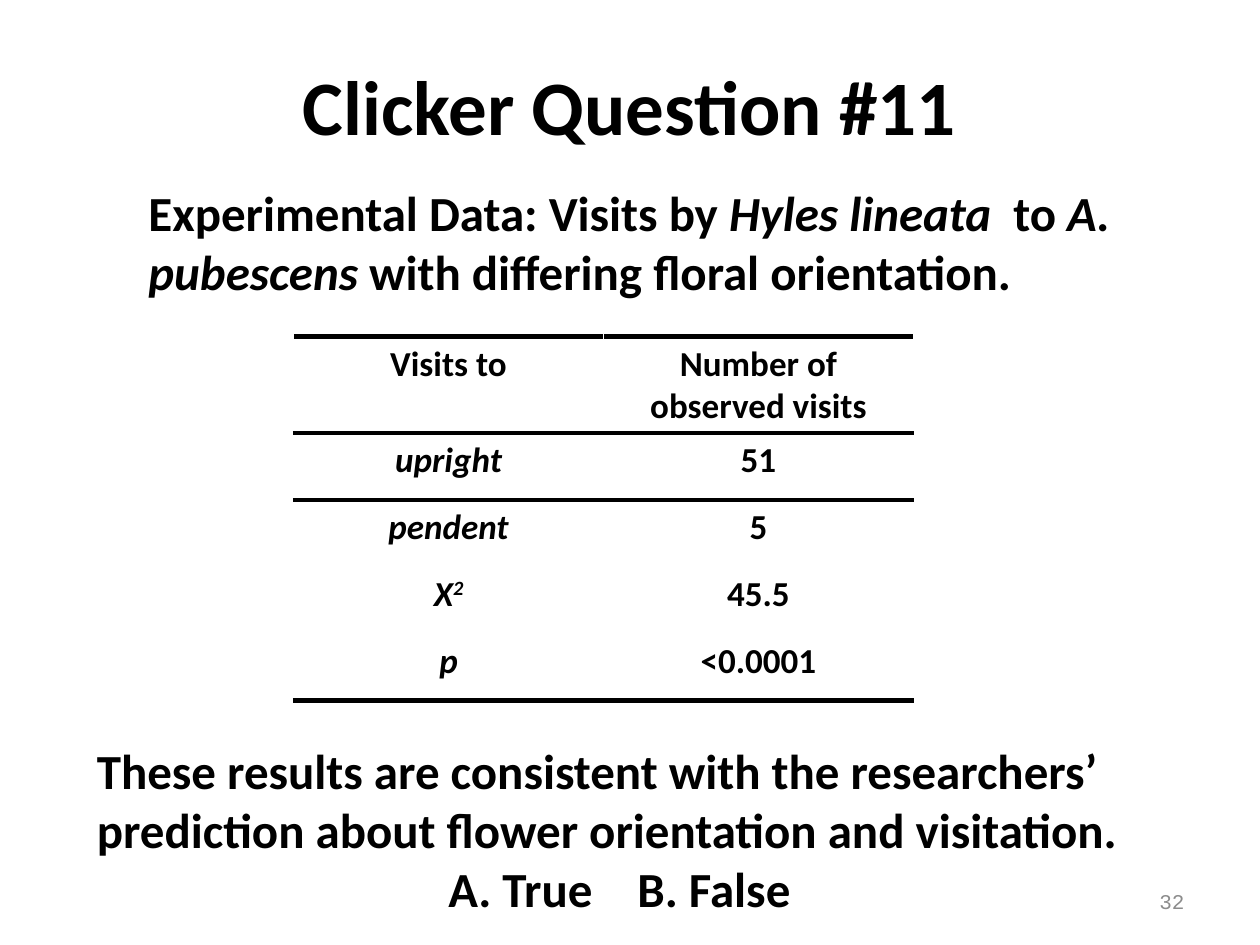
"""Build the clicker question slide with its table of visits."""
from lxml.etree import SubElement
from pptx import Presentation
from pptx.dml.color import RGBColor
from pptx.enum.text import MSO_ANCHOR, PP_ALIGN
from pptx.oxml.ns import qn
from pptx.util import Inches, Pt


def style(paragraph, size, bold=True, name="Calibri", color="000000", align=PP_ALIGN.LEFT):
    paragraph.alignment = align
    font = paragraph.font
    font.size, font.bold, font.name = Pt(size), bold, name
    font.color.rgb = RGBColor.from_string(color)


def add_text(left, top, width, height, anchor=MSO_ANCHOR.MIDDLE):
    shape = slide.shapes.add_textbox(Inches(left), Inches(top), Inches(width), Inches(height))
    shape.text_frame.word_wrap = True
    shape.text_frame.vertical_anchor = anchor
    return shape.text_frame


presentation = Presentation()
presentation.slide_width, presentation.slide_height = Inches(10), Inches(7.5)
slide = presentation.slides.add_slide(presentation.slide_layouts[6])

title = add_text(0, 0, 10, 1.67).paragraphs[0]
title.text = "Clicker Question #11"
style(title, 44, align=PP_ALIGN.CENTER)

question = add_text(0.67, 5.83, 8.75, 1.51, MSO_ANCHOR.TOP)
statement, answers = question.paragraphs[0], question.add_paragraph()
statement.text = "These results are consistent with the researchers’ prediction about flower orientation and visitation."
answers.text = "A. True\tB. False"
answer_properties = answers._p.get_or_add_pPr()
answer_properties.set("marL", str(Inches(2.79)))
answer_properties.set("indent", "0")
tab_stops = SubElement(answer_properties, qn("a:tabLst"))
SubElement(tab_stops, qn("a:tab"), pos=str(Inches(4.54)), algn="l")
for paragraph in question.paragraphs:
    style(paragraph, 28)

rows = [
    ("Visits to", "Number of observed visits"),
    ("upright", "51"),
    ("pendent", "5"),
    ("Χ", "45.5"),
    ("p", "<0.0001"),
]
ruled_edges = {0: ("lnT", "lnB"), 1: ("lnT",), len(rows) - 1: ("lnB",)}
table = slide.shapes.add_table(
    len(rows), 2, Inches(2.33), Inches(2.67), Inches(4.92), Inches(2.88)
).table
table.first_row = table.horz_banding = False
for row_index, values in enumerate(rows):
    table.rows[row_index].height = Inches(0.53 if row_index else 0.76)
    for column_index, value in enumerate(values):
        cell = table.cell(row_index, column_index)
        for edge in ruled_edges.get(row_index, ()):
            line = SubElement(cell._tc.get_or_add_tcPr(), qn(f"a:{edge}"), w=str(Pt(3)))
            SubElement(SubElement(line, qn("a:solidFill")), qn("a:srgbClr"), val="000000")
        cell.fill.background()
        paragraph = cell.text_frame.paragraphs[0]
        paragraph.text = value
        paragraph.space_before = Pt(4)
        style(paragraph, 20, align=PP_ALIGN.CENTER)
        paragraph.font.italic = row_index > 0 and column_index == 0

exponent = table.cell(3, 0).text_frame.paragraphs[0].add_run()
exponent.text = "2"
exponent._r.get_or_add_rPr().set("baseline", "30000")

heading = add_text(1.08, 1.08, 8.17, 1.67).paragraphs[0]
style(heading, 28)
for text, italic in (
    ("Experimental Data: Visits by ", False),
    ("Hyles lineata", True),
    ("  to ", False),
    ("A. pubescens ", True),
    ("with differing floral orientation.", False),
):
    run = heading.add_run()
    run.text = text
    run.font.italic = italic

number = add_text(7.17, 6.95, 2.33, 0.4).paragraphs[0]
number.text = "32"
style(number, 12, False, "Courier New", "8C8C8C", PP_ALIGN.RIGHT)

presentation.save("out.pptx")
